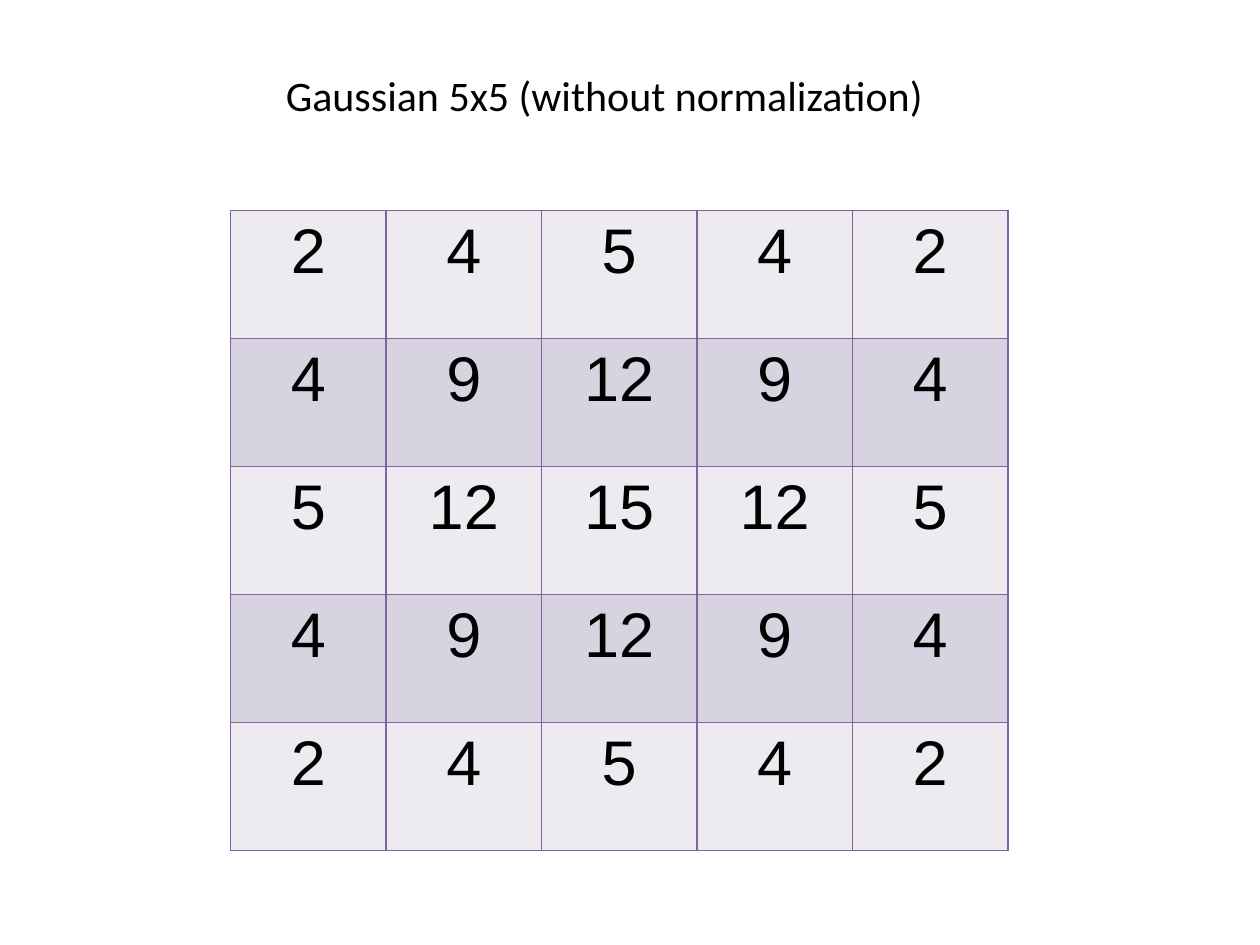
from lxml import etree
from pptx import Presentation
from pptx.dml.color import RGBColor
from pptx.enum import text
from pptx.oxml import ns
from pptx.util import Inches, Pt

KERNEL = [
    [2, 4, 5, 4, 2],
    [4, 9, 12, 9, 4],
    [5, 12, 15, 12, 5],
    [4, 9, 12, 9, 4],
    [2, 4, 5, 4, 2],
]
BANDS = ["EDEAF0", "D8D3E0"]
BORDER = "8064A2"
INK = "000000"


def set_color(target, color):
    target.rgb = RGBColor.from_string(color)


def add_run(paragraph, content, font_name, size):
    run = paragraph.add_run()
    run.text = content
    run.font.name = font_name
    run.font.size = Pt(size)
    set_color(run.font.color, INK)


def add_title(slide, content):
    shape = slide.shapes.add_textbox(Inches(2.17), Inches(0.5), Inches(5.67), Inches(0.51))
    frame = shape.text_frame
    frame.word_wrap = True
    frame.auto_size = text.MSO_AUTO_SIZE.SHAPE_TO_FIT_TEXT
    add_run(frame.paragraphs[0], content, "Calibri", 24)


def set_borders(cell, color, width):
    properties = cell._tc.get_or_add_tcPr()
    for side in ("a:lnL", "a:lnR", "a:lnT", "a:lnB"):
        line = etree.SubElement(properties, ns.qn(side), w=str(Pt(width)))
        fill = etree.SubElement(line, ns.qn("a:solidFill"))
        etree.SubElement(fill, ns.qn("a:srgbClr"), val=color)


def fill_cell(cell, content, color):
    set_borders(cell, BORDER, 1)
    cell.fill.solid()
    set_color(cell.fill.fore_color, color)
    paragraph = cell.text_frame.paragraphs[0]
    paragraph.alignment = text.PP_ALIGN.CENTER
    add_run(paragraph, content, "Arial", 36)


def add_kernel_table(slide, values):
    shape = slide.shapes.add_table(
        len(values), len(values[0]), Inches(1.83), Inches(1.67), Inches(6.17), Inches(5.08)
    )
    table = shape.table
    table.first_row = False
    table.horz_banding = False
    for row_index, row in enumerate(values):
        for column_index, value in enumerate(row):
            cell = table.cell(row_index, column_index)
            fill_cell(cell, str(value), BANDS[row_index % 2])


def main():
    presentation = Presentation()
    presentation.slide_width = Inches(10)
    presentation.slide_height = Inches(7.5)
    slide = presentation.slides.add_slide(presentation.slide_layouts[6])
    add_kernel_table(slide, KERNEL)
    add_title(slide, "Gaussian 5x5 (without normalization)")
    presentation.save("out.pptx")


if __name__ == "__main__":
    main()
